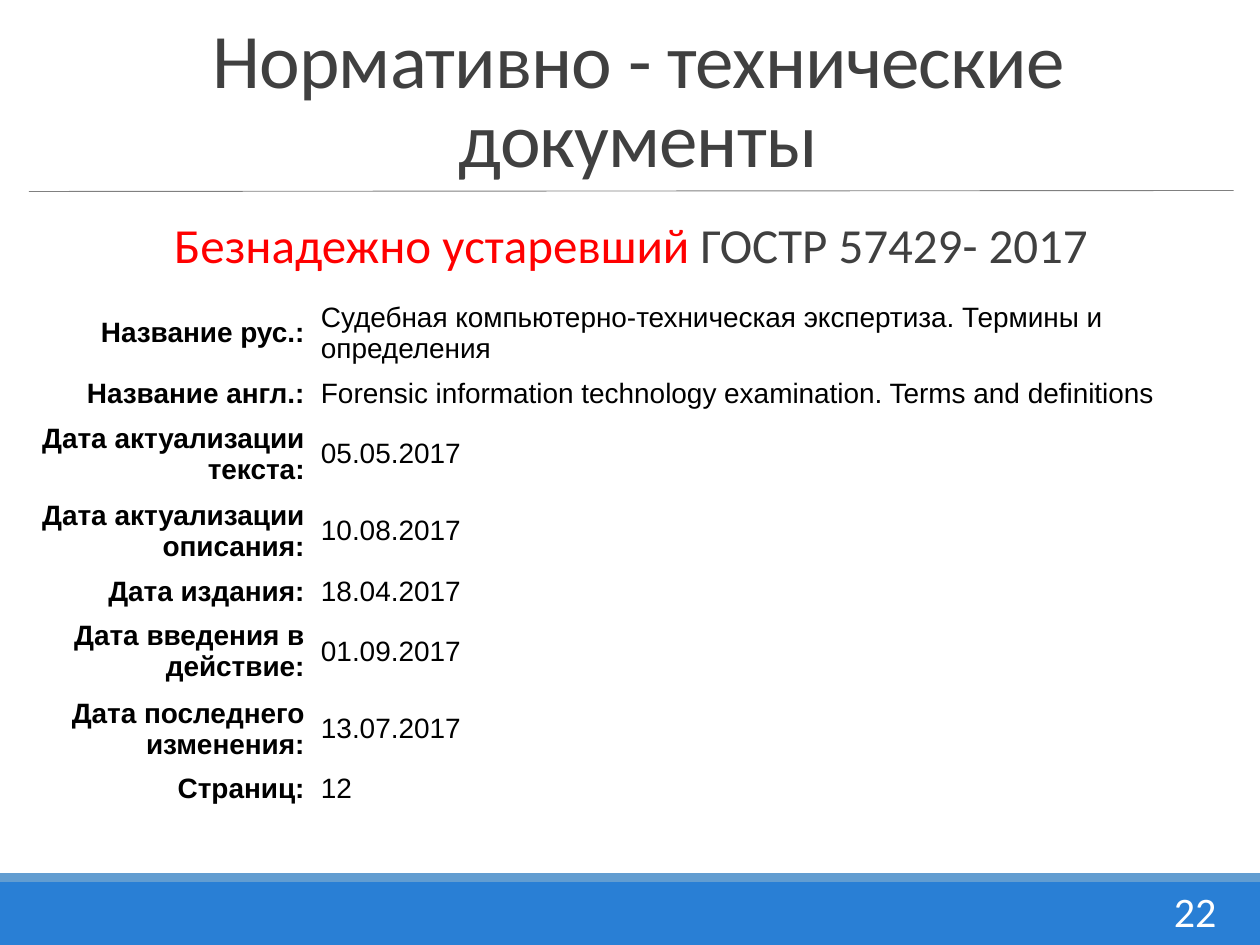
from dataclasses import dataclass
from typing import NamedTuple

from lxml.etree import SubElement
from pptx import Presentation
from pptx.dml.color import RGBColor as Rgb
from pptx.enum.shapes import MSO_CONNECTOR as Link, MSO_SHAPE as Shape
from pptx.enum.text import MSO_ANCHOR as Anchor, MSO_AUTO_SIZE as Fit, PP_ALIGN as Align
from pptx.oxml.ns import qn
from pptx.util import Cm, Pt


@dataclass(frozen=True)
class Theme:
    head: str = "Calibri"
    body: str = "Arial"
    ink: str = "404040"
    black: str = "000000"
    white: str = "FFFFFF"
    alert: str = "FF0000"
    band: str = "297FD5"
    strip: str = "629DD1"
    rule: str = "808080"
    title: float = 44
    lead: float = 28
    page: float = 24
    cell: float = 16


class Box(NamedTuple):
    left: float
    top: float
    width: float
    height: float

    def cm(self) -> list:
        return [Cm(side) for side in self]


class Bar(NamedTuple):
    box: Box
    color: str


class Entry(NamedTuple):
    label: str
    value: str
    lines: int


THEME = Theme()
WIDTH, HEIGHT = 25.4, 19.05
HEIGHTS = {1: 0.84, 2: 1.47}
COLS = (5.66, 19.15)
BARS = (
    Bar(Box(0, 17.78, WIDTH, 1.27), THEME.band),
    Bar(Box(0, 17.6, WIDTH, 0.18), THEME.strip),
)
ENTRIES = (
    Entry("Название рус.:", "Судебная компьютерно-техническая экспертиза. Термины и определения", 2),
    Entry("Название англ.:", "Forensic information technology examination. Terms and definitions", 1),
    Entry("Дата актуализации текста:", "05.05.2017", 2),
    Entry("Дата актуализации описания:", "10.08.2017", 2),
    Entry("Дата издания:", "18.04.2017", 1),
    Entry("Дата введения в действие:", "01.09.2017", 2),
    Entry("Дата последнего изменения:", "13.07.2017", 2),
    Entry("Страниц:", "12", 1),
)


def style(run, face: str, size: float, color: str, bold: bool = False) -> None:
    font = run.font
    font.name, font.size, font.bold = face, Pt(size), bold
    font.color.rgb = Rgb.from_string(color)


def draw_bar(slide, bar: Bar) -> None:
    shape = slide.shapes.add_shape(Shape.RECTANGLE, *bar.box.cm())
    shape.shadow.inherit = False
    shape.fill.solid()
    shape.fill.fore_color.rgb = Rgb.from_string(bar.color)
    shape.line.fill.background()


def draw_rule(slide) -> None:
    ends = [Cm(x) for x in (0.58, 3.86, 24.87, 3.84)]
    line = slide.shapes.add_connector(Link.STRAIGHT, *ends)
    line.line.color.rgb = Rgb.from_string(THEME.rule)
    line.line.width = Pt(0.5)
    SubElement(line._element.spPr, qn("a:effectLst"))


def draw_title(slide, text: str) -> None:
    title = slide.shapes.title
    title.left, title.top, title.width, title.height = Box(2.97, 0.38, 19.79, 3.45).cm()
    frame = title.text_frame
    frame.text = text
    frame.word_wrap, frame.auto_size = True, Fit.NONE
    frame.vertical_anchor = Anchor.MIDDLE
    para = frame.paragraphs[0]
    para.alignment, para.line_spacing = Align.CENTER, 0.85
    run = para.runs[0]
    style(run, THEME.head, THEME.title, THEME.ink)
    run._r.get_or_add_rPr().set("spc", "-50")


def draw_text(slide, box: Box, parts: list[tuple[str, str]], size: float,
              align: Align, anchor: Anchor, inset: float) -> None:
    frame = slide.shapes.add_textbox(*box.cm()).text_frame
    frame.word_wrap = True
    frame.vertical_anchor = anchor
    frame.margin_left = frame.margin_right = Cm(inset)
    para = frame.paragraphs[0]
    para.alignment, para.line_spacing = align, 0.9
    for text, color in parts:
        run = para.add_run()
        run.text = text
        style(run, THEME.head, size, color)


def fill_cell(cell, text: str, label: bool) -> None:
    cell.fill.solid()
    cell.fill.fore_color.rgb = Rgb.from_string(THEME.white)
    cell.vertical_anchor = Anchor.MIDDLE
    cell.margin_left = Cm(0.23)
    cell.margin_right = Cm(0.1 if label else 0.23)
    cell.margin_top = cell.margin_bottom = Cm(0.1)
    cell.text_frame.text = text
    para = cell.text_frame.paragraphs[0]
    para.alignment = Align.RIGHT if label else Align.LEFT
    style(para.runs[0], THEME.body, THEME.cell, THEME.black, label)


def draw_table(slide, left: float, top: float) -> None:
    box = Box(left, top, sum(COLS), sum(HEIGHTS[item.lines] for item in ENTRIES))
    table = slide.shapes.add_table(len(ENTRIES), len(COLS), *box.cm()).table
    table.first_row = table.horz_banding = False
    for col, width in zip(table.columns, COLS):
        col.width = Cm(width)
    for row, item in zip(table.rows, ENTRIES):
        row.height = Cm(HEIGHTS[item.lines])
        fill_cell(row.cells[0], item.label, True)
        fill_cell(row.cells[1], item.value, False)


def main() -> None:
    deck = Presentation()
    deck.slide_width, deck.slide_height = Cm(WIDTH), Cm(HEIGHT)
    slide = deck.slides.add_slide(deck.slide_layouts[5])
    for bar in BARS:
        draw_bar(slide, bar)
    draw_rule(slide)
    draw_title(slide, "Нормативно - технические документы")
    lead = [("Безнадежно устаревший ", THEME.alert), ("ГОСТР 57429- 2017", THEME.ink)]
    draw_text(slide, Box(0.58, 4.34, 24.28, 11.94), lead, THEME.lead,
              Align.CENTER, Anchor.TOP, 0)
    draw_text(slide, Box(22.05, 17.91, 2.72, 1.02), [("22", THEME.white)], THEME.page,
              Align.RIGHT, Anchor.MIDDLE, 0.25)
    draw_table(slide, 0.58, 5.94)
    deck.save("out.pptx")


if __name__ == "__main__":
    main()
